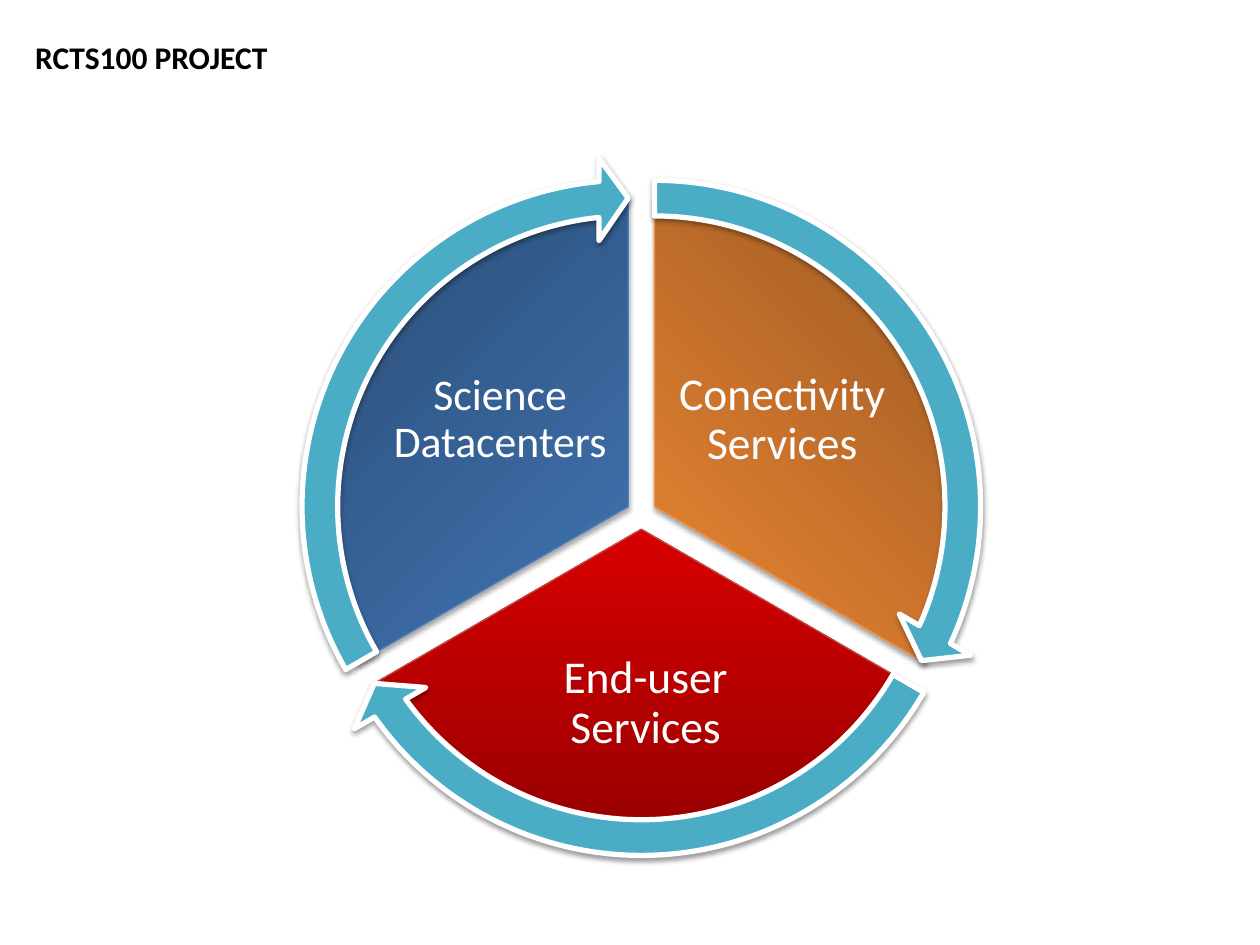
from copy import deepcopy
from dataclasses import dataclass
from math import cos, radians, sin

from lxml.etree import SubElement
from pptx import Presentation
from pptx.dml.color import RGBColor
from pptx.enum.shapes import MSO_SHAPE as Preset
from pptx.enum.text import MSO_ANCHOR as Anchor, PP_ALIGN as Align
from pptx.oxml.ns import qn
from pptx.util import Inches, Pt


@dataclass(frozen=True)
class Theme:
    """Colours, type sizes and line widths of the slide."""
    font: str = "Calibri"
    ink: str = "000000"
    paper: str = "FFFFFF"
    arrow: str = "4BACC6"
    orange: tuple = ("9A5822", "DB7D30", "FF953E")
    orange_edge: str = "F69240"
    red: tuple = ("970000", "D70000", "FF0000")
    red_edge: str = "BF4C48"
    blue: tuple = ("2A4C75", "3C6CA6", "4780C5")
    blue_edge: str = "4B7EBC"
    title_size: int = 18
    label_size: int = 26
    small_label_size: int = 25
    wedge_edge_width: float = 0.75
    arrow_edge_width: float = 3


THEME = Theme()
COLUMNS, ROWS = 100, 75
UNIT = Inches(10) / COLUMNS
HUB = (50.9, 40.8)
SPREAD = 1.2
WEDGE_SIZE, ARROW_SIZE = 49.4, 55.5
SWEEP = 120
HEAD_ANGLE = 3.275

SECTORS = (
    dict(label="Conectivity Services", start=270, shades=THEME.orange,
         edge=THEME.orange_edge, shade_angle=135, size=THEME.label_size,
         box=(53.3, 26, 17.6, 14.7), inset=0.04),
    dict(label="End-user Services", start=30, shades=THEME.red,
         edge=THEME.red_edge, shade_angle=270, size=THEME.label_size,
         box=(38.25, 49.4, 26, 12.9), inset=0.04),
    dict(label="Science Datacenters", start=150, shades=THEME.blue,
         edge=THEME.blue_edge, shade_angle=45, size=THEME.small_label_size,
         box=(30.9, 26, 17.6, 14.7), inset=0.03),
)


def grid(*cells):
    """Turn grid columns and rows into slide lengths."""
    return [round(cell * UNIT) for cell in cells]


def angle_value(degrees):
    """Turn degrees into the value of a shape adjustment."""
    return degrees % 360 * 0.6


def apply_format(target, values):
    """Set each named attribute of the target."""
    for name, value in values.items():
        setattr(target, name, value)


def add_shadow(shape, opacity, distance):
    """Give the shape a soft shadow that falls downwards."""
    shape.shadow.inherit = False
    effects = shape.element.spPr.find(qn("a:effectLst"))
    shadow = SubElement(effects, qn("a:outerShdw"), blurRad=str(Pt(3.1)),
                        dist=str(Pt(distance)), dir="5400000", rotWithShape="0")
    colour = SubElement(shadow, qn("a:srgbClr"), val=THEME.ink)
    SubElement(colour, qn("a:alpha"), val=str(opacity * 1000))


def fill_gradient(shape, shades, clockwise_angle):
    """Fill the shape with evenly spaced shades."""
    shape.fill.gradient()
    shape.fill.gradient_angle = 360 - clockwise_angle
    stop_list = shape.element.spPr.find(".//" + qn("a:gsLst"))
    stop_list.append(deepcopy(stop_list[0]))
    for index, (stop, shade) in enumerate(zip(shape.fill.gradient_stops, shades)):
        stop.position = index / (len(shades) - 1)
        stop.color.rgb = RGBColor.from_string(shade)


def add_round(shapes, preset, size, middle, adjustments, edge, edge_width):
    """Add an outlined preset shape centred on its sector's middle."""
    left, top = (centre - size / 2 for centre in middle)
    shape = shapes.add_shape(preset, *grid(left, top, size, size))
    for index, value in enumerate(adjustments):
        shape.adjustments[index] = value
    shape.line.color.rgb = RGBColor.from_string(edge)
    shape.line.width = Pt(edge_width)
    return shape


def sector_middle(start):
    """Push a sector's middle outwards from the hub."""
    outward = radians(start + SWEEP / 2)
    return HUB[0] + SPREAD * cos(outward), HUB[1] + SPREAD * sin(outward)


def add_wedge(shapes, sector):
    """Add the shaded pie slice of a sector."""
    start = sector["start"]
    ends = angle_value(start), angle_value(start + SWEEP)
    wedge = add_round(shapes, Preset.PIE, WEDGE_SIZE, sector_middle(start), ends,
                      sector["edge"], THEME.wedge_edge_width)
    fill_gradient(wedge, sector["shades"], sector["shade_angle"])
    add_shadow(wedge, 35, 1.8)


def add_arrow(shapes, sector):
    """Add the curved arrow around a sector."""
    start = sector["start"]
    head = angle_value(start + SWEEP) - HEAD_ANGLE
    bends = 0.051, HEAD_ANGLE, head, angle_value(start), 0.059
    arrow = add_round(shapes, Preset.CIRCULAR_ARROW, ARROW_SIZE, sector_middle(start),
                      bends, THEME.paper, THEME.arrow_edge_width)
    arrow.fill.solid()
    arrow.fill.fore_color.rgb = RGBColor.from_string(THEME.arrow)
    add_shadow(arrow, 38, 1.6)


def add_text(shapes, box, words, colour, font, paragraph_format, frame_format):
    """Add a vertically centred text box."""
    frame = shapes.add_textbox(*grid(*box)).text_frame
    apply_format(frame, {"word_wrap": True, "vertical_anchor": Anchor.MIDDLE,
                         **frame_format})
    paragraph = frame.paragraphs[0]
    paragraph.text = words
    apply_format(paragraph, paragraph_format)
    apply_format(paragraph.runs[0].font, {"name": THEME.font, **font})
    paragraph.runs[0].font.color.rgb = RGBColor.from_string(colour)


def add_label(shapes, sector):
    """Add the name of a sector."""
    sides = ("left", "top", "right", "bottom")
    insets = {f"margin_{side}": Inches(sector["inset"]) for side in sides}
    add_text(shapes, sector["box"], sector["label"], THEME.paper,
             {"size": Pt(sector["size"])},
             {"alignment": Align.CENTER, "line_spacing": 0.9}, insets)


def main():
    """Build the slide and save it."""
    deck = Presentation()
    deck.slide_width, deck.slide_height = grid(COLUMNS, ROWS)
    slide = deck.slides.add_slide(deck.slide_layouts[6])
    add_text(slide.shapes, (1.8, 0, 95.2, 9), "RCTS100 PROJECT", THEME.ink,
             {"size": Pt(THEME.title_size), "bold": True},
             {"alignment": Align.LEFT}, {})
    cycle = slide.shapes.add_group_shape().shapes
    for sector in SECTORS:
        add_wedge(cycle, sector)
        add_label(cycle, sector)
    for sector in SECTORS:
        add_arrow(cycle, sector)
    deck.save("out.pptx")


if __name__ == "__main__":
    main()
